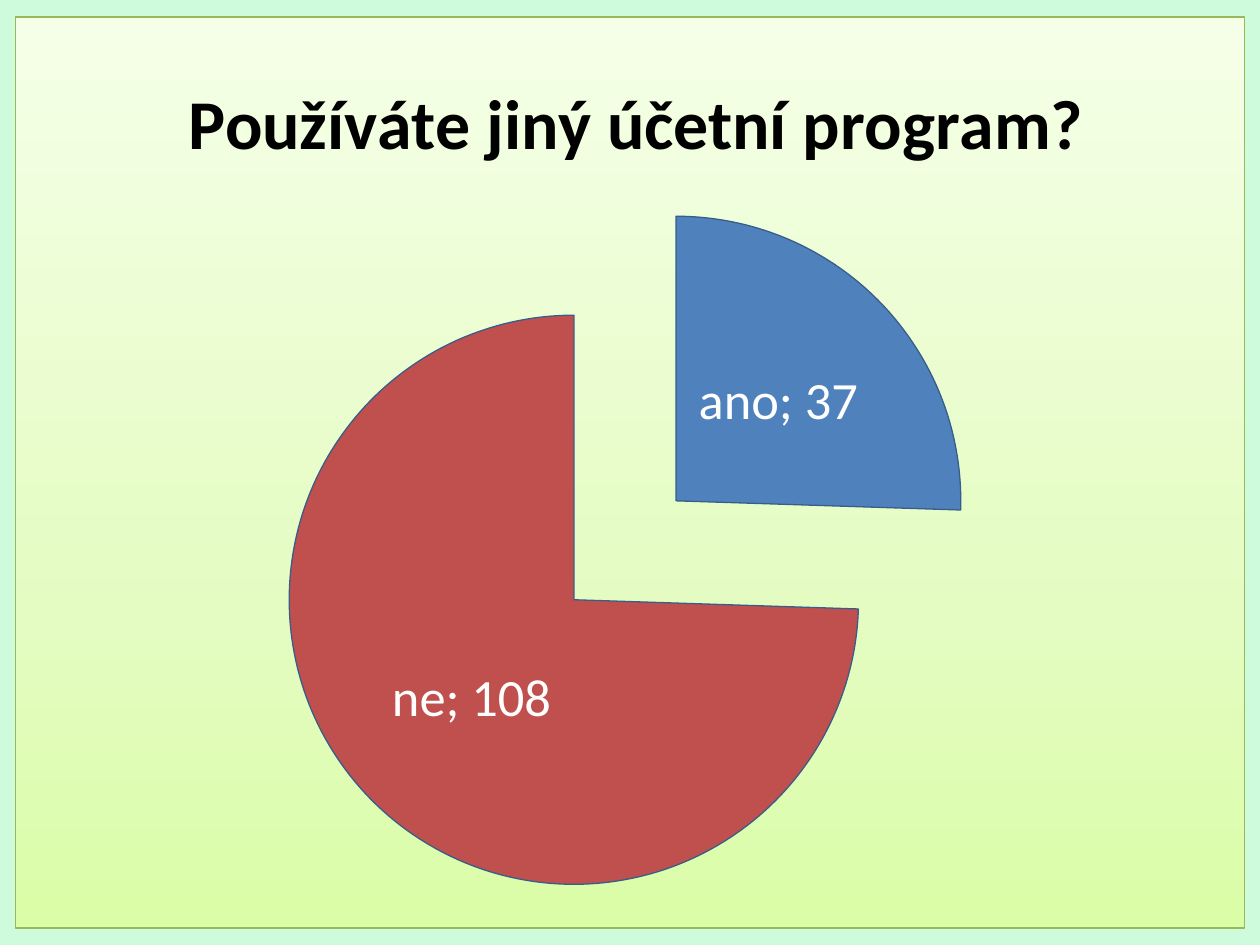
import dataclasses

import lxml.etree
import pptx
import pptx.chart.data
import pptx.dml.color
import pptx.enum.chart
import pptx.oxml
import pptx.oxml.ns
import pptx.util

Inches = pptx.util.Inches
qn = pptx.oxml.ns.qn


@dataclasses.dataclass(frozen=True)
class Theme:
    font: str = "Calibri"
    background: str = "CDFBDC"
    text: str = "000000"
    label_text: str = "FFFFFF"
    slices: tuple = ("4F81BD", "C0504D")
    slice_line: str = "385D8A"
    border: str = "98B955"
    gradient: tuple = ((0, "DAFDA7"), (35, "E4FCC2"), (100, "F5FFE7"))
    title_size: int = 40
    label_size: int = 30
    base_size: int = 10
    line_width: float = 0.75


def rgb(color):
    return pptx.dml.color.RGBColor.from_string(color)


def format_font(font, *, name, size, color, bold=False):
    font.name = name
    font.size = pptx.util.Pt(size)
    font.color.rgb = rgb(color)
    font.bold = bold


def write_text(frame, text, **style):
    span = frame.paragraphs[0].add_run()
    span.text = text
    format_font(span.font, **style)


def manual_layout(**settings):
    """Return a c:layout element with the given settings, in schema order."""
    layout = lxml.etree.Element(qn("c:layout"))
    manual = lxml.etree.SubElement(layout, qn("c:manualLayout"))
    for name, value in settings.items():
        lxml.etree.SubElement(manual, qn(f"c:{name}")).set("val", str(value))
    return layout


class SlideBuilder:
    def __init__(self, deck, theme):
        self.theme = theme
        self.slide = deck.slides.add_slide(deck.slide_layouts[6])

    def fill_background(self):
        fill = self.slide.background.fill
        fill.solid()
        fill.fore_color.rgb = rgb(self.theme.background)

    def add_pie(self, title, values, left, top, width, height):
        data = pptx.chart.data.CategoryChartData()
        data.categories = list(values)
        data.add_series("Series 1", list(values.values()))
        chart = self.slide.shapes.add_chart(
            pptx.enum.chart.XL_CHART_TYPE.PIE, left, top, width, height, data
        ).chart
        format_font(chart.font, name=self.theme.font,
                    size=self.theme.base_size, color=self.theme.text)
        chart.has_legend = False
        self.add_chart_title(chart, title)
        self.place_plot(chart)
        self.fill_chart_area(chart)
        self.format_slices(chart.plots[0].series[0], len(values))
        self.add_labels(chart.plots[0])

    def add_chart_title(self, chart, title):
        chart.has_title = True
        write_text(chart.chart_title.text_frame, title, name=self.theme.font,
                   size=self.theme.title_size, color=self.theme.text, bold=True)
        element = chart.chart_title._element
        for old in element.findall(qn("c:layout")):
            element.remove(old)
        element.find(qn("c:tx")).addnext(
            manual_layout(xMode="edge", yMode="edge", x=0.13, y=0.05))

    def place_plot(self, chart):
        area = chart._chartSpace.chart.plotArea
        for old in area.findall(qn("c:layout")):
            area.remove(old)
        area.insert(0, manual_layout(
            layoutTarget="inner", xMode="edge", yMode="edge",
            x=0.074, y=0.195, w=0.844, h=0.781))

    def fill_chart_area(self, chart):
        stops = "".join(
            f'<a:gs pos="{position * 1000}"><a:srgbClr val="{color}"/></a:gs>'
            for position, color in self.theme.gradient)
        width = pptx.util.Pt(self.theme.line_width)
        chart._chartSpace.chart.addnext(pptx.oxml.parse_xml(
            f'<c:spPr {pptx.oxml.ns.nsdecls("c", "a")}>'
            f'<a:gradFill><a:gsLst>{stops}</a:gsLst>'
            '<a:lin ang="16200000" scaled="1"/></a:gradFill>'
            f'<a:ln w="{width}"><a:solidFill>'
            f'<a:srgbClr val="{self.theme.border}"/></a:solidFill></a:ln>'
            '</c:spPr>'))

    def format_slices(self, series, count):
        for index, color in zip(range(count), self.theme.slices):
            style = series.points[index].format
            style.fill.solid()
            style.fill.fore_color.rgb = rgb(color)
            style.line.color.rgb = rgb(self.theme.slice_line)
            style.line.width = pptx.util.Pt(self.theme.line_width)
        explosion = lxml.etree.Element(qn("c:explosion"), val="25")
        series._element.find(qn("c:dPt")).addprevious(explosion)

    def add_labels(self, plot):
        plot.vary_by_categories = True
        labels = plot.series[0].data_labels
        labels.show_value = True
        labels.show_category_name = True
        labels.show_percentage = False
        labels.position = pptx.enum.chart.XL_LABEL_POSITION.CENTER
        format_font(labels.font, name=self.theme.font,
                    size=self.theme.label_size, color=self.theme.label_text)
        separator = lxml.etree.Element(qn("c:separator"))
        separator.text = "; "
        element = labels._element
        last_flag = element.find(qn("c:showBubbleSize"))
        if last_flag is None:
            last_flag = element.find(qn("c:showPercent"))
        last_flag.addnext(separator)


def main():
    deck = pptx.Presentation()
    deck.slide_width, deck.slide_height = Inches(10), Inches(7.5)
    page = SlideBuilder(deck, Theme())
    page.fill_background()
    page.add_pie("Používáte jiný účetní program?", {"ano": 37, "ne": 108},
                 Inches(0.12), Inches(0.13), Inches(9.76), Inches(7.24))
    deck.save("out.pptx")


if __name__ == "__main__":
    main()
